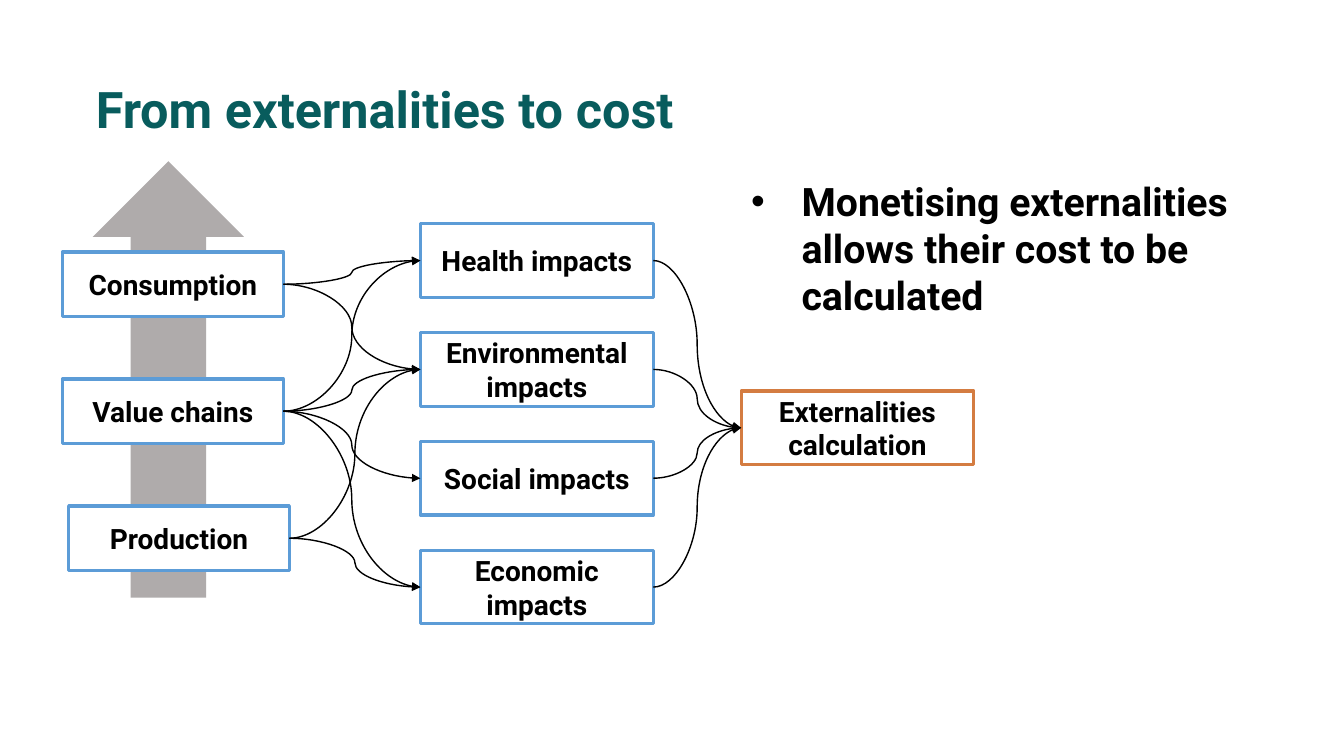
from lxml import etree
from pptx import Presentation
from pptx.dml.color import RGBColor
from pptx.enum.shapes import MSO_CONNECTOR, MSO_SHAPE
from pptx.enum.text import MSO_ANCHOR, MSO_AUTO_SIZE, PP_ALIGN
from pptx.oxml.ns import qn
from pptx.util import Inches, Pt

CURVE = MSO_CONNECTOR.CURVE
RECTANGLE, UP_ARROW = MSO_SHAPE.RECTANGLE, MSO_SHAPE.UP_ARROW
TOP, MIDDLE = MSO_ANCHOR.TOP, MSO_ANCHOR.MIDDLE
LEFT, CENTER = PP_ALIGN.LEFT, PP_ALIGN.CENTER
NO_AUTOFIT = MSO_AUTO_SIZE.NONE
LEFT_SITE, RIGHT_SITE = 1, 3

COLORS = {
    "title": "085C5D",
    "text": "000000",
    "box": "FFFFFF",
    "blue": "5C9CD7",
    "orange": "D47C41",
    "arrow": "AFABAB",
}
IMPACT_TOP, IMPACT_PITCH = 2.22, 1.08
STAGE_TOP, STAGE_PITCH = 2.5, 1.26
STAGE_SIZE, IMPACT_SIZE = (2.19, 0.64), (2.31, 0.73)


def write(shape, text, size, color, align, anchor):
    frame = shape.text_frame
    frame.word_wrap = True
    frame.auto_size = NO_AUTOFIT
    frame.vertical_anchor = anchor
    para = frame.paragraphs[0]
    para.alignment = align
    para.space_before = Pt(0)
    span = para.add_run()
    span.text = text
    span.font.name = "Roboto"
    span.font.size = Pt(size)
    span.font.bold = True
    span.font.color.rgb = RGBColor.from_string(COLORS[color])
    return para


def add_box(text, left, top, size, outline):
    box = page.shapes.add_shape(RECTANGLE, Inches(left), Inches(top), *map(Inches, size))
    box.shadow.inherit = False
    box.fill.solid()
    box.fill.fore_color.rgb = RGBColor.from_string(COLORS["box"])
    box.line.color.rgb = RGBColor.from_string(COLORS[outline])
    box.line.width = Pt(2.25)
    write(box, text, 20, "text", CENTER, MIDDLE)
    return box


deck = Presentation()
deck.slide_width, deck.slide_height = Inches(13.33), Inches(7.5)
page = deck.slides.add_slide(deck.slide_layouts[1])

title, message = page.shapes.title, page.placeholders[1]
title.left, title.top, title.width, title.height = map(Inches, (0.85, 0.72, 11.57, 1.34))
write(title, "From externalities to cost", 36, "title", LEFT, TOP)

message.left, message.top, message.width, message.height = map(Inches, (7.35, 1.71, 5.81, 1.12))
para = write(message, "Monetising externalities allows their cost to be calculated", 28, "text", LEFT, TOP)
properties = para._p.get_or_add_pPr()
properties.set("marL", str(Inches(0.5)))
properties.set("indent", str(-Inches(0.5)))
etree.SubElement(properties, qn("a:buFont"), typeface="Arial")
etree.SubElement(properties, qn("a:buChar"), char="•")

arrow = page.shapes.add_shape(UP_ARROW, Inches(0.92), Inches(1.6), Inches(1.5), Inches(4.33))
arrow.shadow.inherit = False
arrow.fill.solid()
arrow.fill.fore_color.rgb = RGBColor.from_string(COLORS["arrow"])
arrow.line.fill.background()

boxes = {}
for row, (name, left) in enumerate([("Consumption", 0.62), ("Value chains", 0.62), ("Production", 0.68)]):
    boxes[name] = add_box(name, left, STAGE_TOP + row * STAGE_PITCH, STAGE_SIZE, "blue")

impacts = ["Health impacts", "Environmental impacts", "Social impacts", "Economic impacts"]
for row, name in enumerate(impacts):
    boxes[name] = add_box(name, 4.17, IMPACT_TOP + row * IMPACT_PITCH, IMPACT_SIZE, "blue")

result = "Externalities calculation"
boxes[result] = add_box(result, 7.35, 3.88, IMPACT_SIZE, "orange")

health, environment, social, economy = impacts
targets = {
    "Consumption": [health, environment],
    "Value chains": impacts,
    "Production": [environment, economy],
}
links = [(stage, impact) for stage, reached in targets.items() for impact in reached]
links += [(impact, result) for impact in impacts]

for source, target in links:
    start, end = boxes[source], boxes[target]
    link = page.shapes.add_connector(
        CURVE,
        start.left + start.width,
        start.top + start.height // 2,
        end.left,
        end.top + end.height // 2,
    )
    link.begin_connect(start, RIGHT_SITE)
    link.end_connect(end, LEFT_SITE)
    link.line.color.rgb = RGBColor.from_string(COLORS["text"])
    link.line.width = Pt(1)
    etree.SubElement(link.line._get_or_add_ln(), qn("a:tailEnd"), type="triangle")
    etree.SubElement(link._element.spPr, qn("a:effectLst"))

deck.save("out.pptx")
